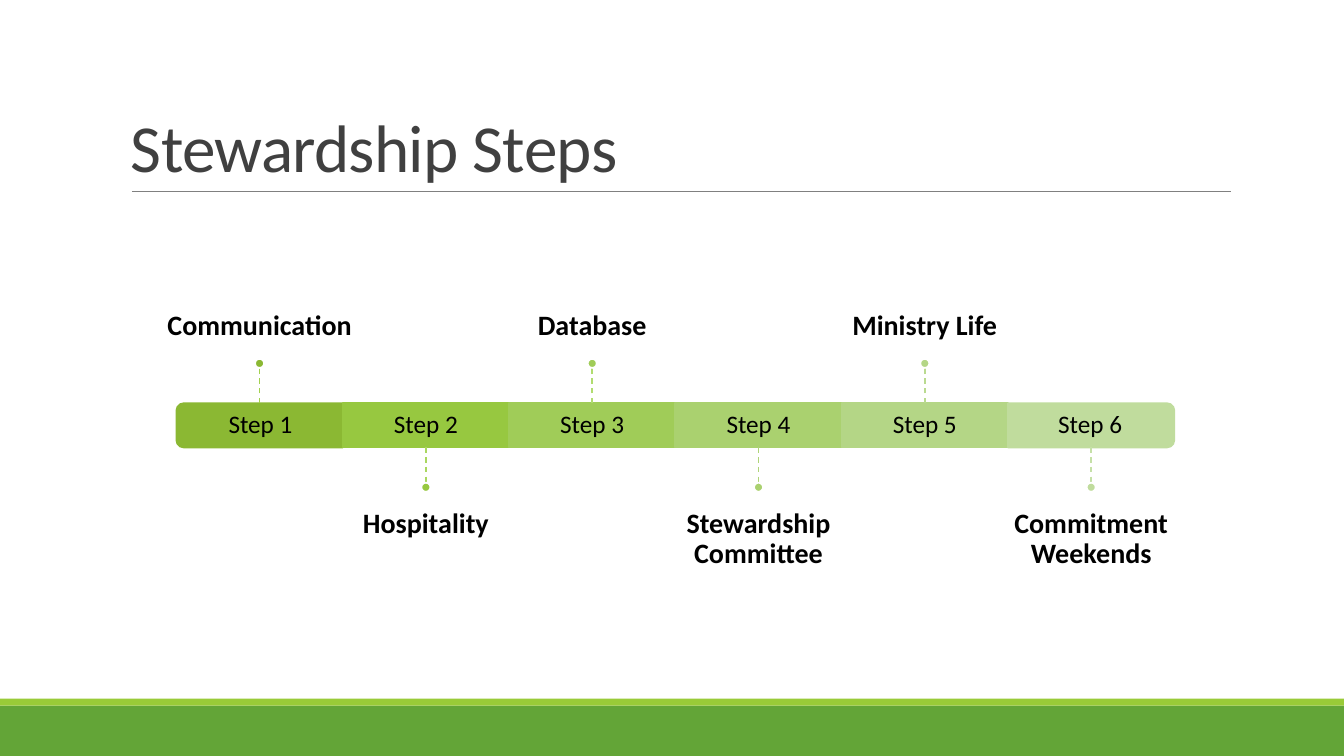
from pptx import Presentation
from pptx.dml.color import RGBColor
from pptx.enum import dml, shapes, text
from pptx.oxml.ns import qn
from pptx.util import Pt
from lxml import etree

TITLE = "Stewardship Steps"
# step, topic, segment colour, stem colour
STEPS = [
    ("Step 1", "Communication", "8BB833", "A2D150"),
    ("Step 2", "Hospitality", "97C840", "AAD760"),
    ("Step 3", "Database", "A0CC58", "B1DC70"),
    ("Step 4", "Stewardship Committee", "AAD16F", "AFD479"),
    ("Step 5", "Ministry Life", "B4D686", "BADA90"),
    ("Step 6", "Commitment Weekends", "C0DC9D", "C5E0A7"),
]
THEME = {
    "font": "Calibri", "title_size": 48, "step_size": 18, "topic_size": 20,
    "title": "404040", "text": "000000", "rule": "808080", "dot_edge": "FFFFFF",
    "footer": "63A537", "footer_edge": "99CB38",
}
PAGE_WIDTH, PAGE_HEIGHT = 960, 540
BAR_LEFT, BAR_TOP, BAR_HEIGHT, STEP_WIDTH = 126, 288, 31.6, 118.8
STEM, DOT = 25.2, 6.5
TOPIC_WIDTH, TOPIC_HEIGHT, TOPIC_GAP = 198, 110.9, 12.2
STEP_INSET, END_INDENT = 10.8, 1.4

deck = Presentation()
deck.slide_width, deck.slide_height = Pt(PAGE_WIDTH), Pt(PAGE_HEIGHT)
page = deck.slides.add_slide(deck.slide_layouts[6])


def add_filled(kind, left, top, width, height, fill, edge=None):
    shape = page.shapes.add_shape(kind, Pt(left), Pt(top), Pt(width), Pt(height))
    shape.shadow.inherit = False
    shape.fill.solid()
    shape.fill.fore_color.rgb = RGBColor.from_string(fill)
    if edge:
        shape.line.color.rgb = RGBColor.from_string(edge)
        shape.line.width = Pt(1.25)
    else:
        shape.line.fill.background()
    return shape


def add_line(start, end, color, width):
    line = page.shapes.add_connector(
        shapes.MSO_CONNECTOR.STRAIGHT, *(Pt(value) for value in (*start, *end)))
    line.line.color.rgb = RGBColor.from_string(color)
    line.line.width = Pt(width)
    etree.SubElement(line._element.spPr, qn("a:effectLst"))
    return line


def add_box(left, top, width, height):
    return page.shapes.add_textbox(Pt(left), Pt(top), Pt(width), Pt(height))


def write(box, words, size, color=THEME["text"], bold=False, spacing=0.9, tracking=None,
          align=text.PP_ALIGN.CENTER, anchor=text.MSO_ANCHOR.MIDDLE, insets=(0, 0, 0, 0)):
    """Put one paragraph in a shape; insets are left, top, right, bottom."""
    frame = box.text_frame
    frame.word_wrap = True
    frame.vertical_anchor = anchor
    (frame.margin_left, frame.margin_top,
     frame.margin_right, frame.margin_bottom) = map(Pt, insets)
    para = frame.paragraphs[0]
    para.alignment, para.line_spacing = align, spacing
    span = para.add_run()
    span.text = words
    span.font.name, span.font.size, span.font.bold = THEME["font"], Pt(size), bold
    span.font.color.rgb = RGBColor.from_string(color)
    if tracking is not None:
        span.font._element.set("spc", str(round(tracking * 100)))


def add_segment(index, step, color):
    """Draw one part of the bar; the two ends are rounded on their outer side."""
    left = BAR_LEFT + index * STEP_WIDTH
    is_first, is_last = index == 0, index == len(STEPS) - 1
    if is_first or is_last:
        shift = (STEP_WIDTH - BAR_HEIGHT) / 2
        segment = add_filled(shapes.MSO_SHAPE.ROUND_2_SAME_RECTANGLE, left + shift,
                             BAR_TOP - shift, BAR_HEIGHT, STEP_WIDTH, color, color)
        segment.rotation = 270 if is_first else 90
        label = add_box(left + (END_INDENT if is_first else 0), BAR_TOP,
                        STEP_WIDTH - END_INDENT, BAR_HEIGHT)
    else:
        segment = label = add_filled(shapes.MSO_SHAPE.RECTANGLE, left, BAR_TOP,
                                     STEP_WIDTH, BAR_HEIGHT, color, color)
    write(label, step, THEME["step_size"], insets=(STEP_INSET,) * 4)
    return segment


def add_topic(index, topic, color, stem_color, segment):
    """Draw stem, dot and topic, above the bar for even indexes and below for odd."""
    center = BAR_LEFT + (index + 0.5) * STEP_WIDTH
    above = index % 2 == 0
    if above:
        bar_edge = BAR_TOP
        stem_end = bar_edge - STEM
        dot_top = stem_end - DOT
        topic_top = dot_top - TOPIC_HEIGHT
        anchor, insets = text.MSO_ANCHOR.BOTTOM, (0, 0, 0, TOPIC_GAP)
    else:
        bar_edge = BAR_TOP + BAR_HEIGHT
        stem_end = dot_top = bar_edge + STEM
        topic_top = dot_top + DOT
        anchor, insets = text.MSO_ANCHOR.TOP, (0, TOPIC_GAP, 0, 0)
    write(add_box(center - TOPIC_WIDTH / 2, topic_top, TOPIC_WIDTH, TOPIC_HEIGHT), topic,
          THEME["topic_size"], bold=True, anchor=anchor, insets=insets)
    stem = add_line((center, bar_edge), (center, stem_end), stem_color, 1)
    stem.line.dash_style = dml.MSO_LINE.DASH
    if not segment.rotation:
        stem.begin_connect(segment, 0 if above else 2)
    add_filled(shapes.MSO_SHAPE.OVAL, center - DOT / 2, dot_top, DOT, DOT,
               color, THEME["dot_edge"])


add_filled(shapes.MSO_SHAPE.RECTANGLE, 0, 504, PAGE_WIDTH, 36, THEME["footer"])
add_filled(shapes.MSO_SHAPE.RECTANGLE, 0, 499, PAGE_WIDTH, 5, THEME["footer_edge"])
add_line((94.3, 136.8), (879, 136.8), THEME["rule"], 0.5)
write(add_box(86.4, 22.3, 792, 114.5), TITLE, THEME["title_size"], color=THEME["title"],
      spacing=0.85, tracking=-0.5, align=text.PP_ALIGN.LEFT,
      anchor=text.MSO_ANCHOR.BOTTOM, insets=(7.2, 3.6, 7.2, 3.6))
for index, (step, topic, color, stem_color) in enumerate(STEPS):
    segment = add_segment(index, step, color)
    add_topic(index, topic, color, stem_color, segment)

deck.save("out.pptx")
